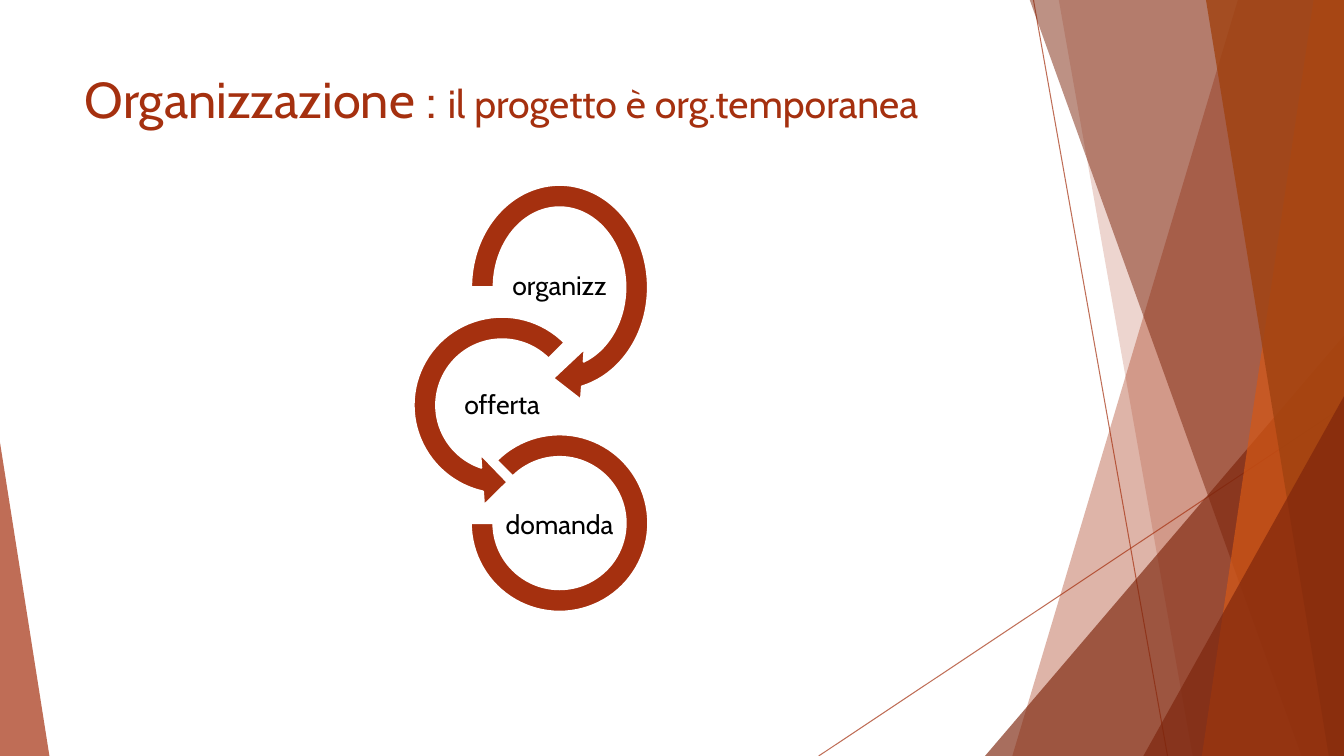
import pptx
import pptx.util
import pptx.dml.color
import pptx.enum.shapes
import pptx.enum.text
import pptx.oxml.ns
from lxml import etree

Inches = pptx.util.Inches
Pt = pptx.util.Pt
SHAPES = pptx.enum.shapes.MSO_SHAPE
ALIGN = pptx.enum.text.PP_ALIGN
ANCHOR = pptx.enum.text.MSO_ANCHOR
qn = pptx.oxml.ns.qn

RUST = "A5300F"
DARK = "7C240B"


def paint(fill, color, opacity=100):
    fill.solid()
    fill.fore_color.rgb = pptx.dml.color.RGBColor.from_string(color)
    if opacity < 100:
        tone = fill._xPr.find(qn("a:solidFill"))[0]
        etree.SubElement(tone, qn("a:alpha"), val=str(opacity * 1000))


def style_font(font, size, color):
    for name, value in {"name": "Cabin", "size": Pt(size)}.items():
        setattr(font, name, value)
    paint(font.fill, color)


deck = pptx.Presentation()
deck.slide_width = Inches(13.33)
deck.slide_height = Inches(7.5)
slide = deck.slides.add_slide(deck.slide_layouts[5])
shapes = slide.shapes

for start_x, start_y, end_x, end_y in [(10.25, 0, 11.58, 7.5), (13.33, 4.03, 8.12, 7.5)]:
    ray = shapes.add_connector(
        pptx.enum.shapes.MSO_CONNECTOR.STRAIGHT,
        Inches(start_x), Inches(start_y), Inches(end_x), Inches(end_y))
    ray.line.width = Pt(0.75)
    paint(ray.line.fill, RUST, 70)
    etree.SubElement(ray._element.spPr, qn("a:effectLst"))

facets = [
    ("band", (12.28, 10.04), RUST, 36),
    ("band", (10.5, 11.83), RUST, 20),
    ("wedge", (9.77, 3.33, 3.56, 4.17, 1), DARK, 66),
    ("band", (10.21, 12.91), DARK, 50),
    ("band", (13.03, 11.92), "D55816", 70),
    ("band", (11.96, 13.18), "A04210", 80),
    ("wedge", (11.34, 3.93, 1.99, 3.57, 1), DARK, 66),
    ("wedge", (0, 4.39, 0.49, 3.11, 0), RUST, 70),
]
for kind, geometry, color, opacity in facets:
    if kind == "band":
        top_x, bottom_x = geometry
        outline = shapes.build_freeform(Inches(top_x), Inches(-0.01))
        outline.add_line_segments(
            [(Inches(x), Inches(y)) for x, y in [(13.33, -0.01), (13.33, 7.5), (bottom_x, 7.5)]],
            close=True)
        facet = outline.convert_to_shape()
    else:
        *box, apex = geometry
        facet = shapes.add_shape(SHAPES.ISOSCELES_TRIANGLE, *map(Inches, box))
        facet.adjustments[0] = apex
    facet.shadow.inherit = False
    facet.line.fill.background()
    paint(facet.fill, color, opacity)

title = shapes.title
title_box = {"left": 0.74, "top": 0.63, "width": 9.4, "height": 1.44}
for side, length in title_box.items():
    setattr(title, side, Inches(length))
title.text_frame.vertical_anchor = ANCHOR.TOP
heading = title.text_frame.paragraphs[0]
heading.alignment = ALIGN.LEFT
for words, size in [("Organizzazione : ", 36), ("il progetto è org.temporanea", 28)]:
    run = heading.add_run()
    run.text = words
    style_font(run.font, size, RUST)

stages = [
    ("organizz", SHAPES.CIRCULAR_ARROW, (4.53, 1.69, 2.04, 2.32),
     (0.1098, 11.42322, 45, 108, 0.125), (4.98, 2.56)),
    ("offerta", SHAPES.LEFT_CIRCULAR_ARROW, (3.96, 3, 2.04, 2.04),
     (0.1098, 11.42322, 63, 189, 0.125), (4.41, 3.74)),
    ("domanda", SHAPES.BLOCK_ARC, (4.67, 4.31, 1.76, 1.76),
     (135, 108, 0.1274), (4.98, 4.93)),
]
for stage, preset, box, adjustments, corner in stages:
    loop = shapes.add_shape(preset, *map(Inches, box))
    for index, value in enumerate(adjustments):
        loop.adjustments[index] = value
    loop.shadow.inherit = False
    paint(loop.fill, RUST)
    paint(loop.line.fill, "FFFFFF")
    loop.line.width = Pt(1.5)

    label = shapes.add_textbox(*map(Inches, corner), Inches(1.14), Inches(0.57))
    frame = label.text_frame
    frame_format = {"word_wrap": True, "vertical_anchor": ANCHOR.MIDDLE}
    for side in ("left", "top", "right", "bottom"):
        frame_format["margin_" + side] = Inches(0.01)
    for name, value in frame_format.items():
        setattr(frame, name, value)
    caption = frame.paragraphs[0]
    caption.alignment = ALIGN.CENTER
    caption.line_spacing = 0.9
    run = caption.add_run()
    run.text = stage
    style_font(run.font, 19, "000000")

deck.save("out.pptx")
